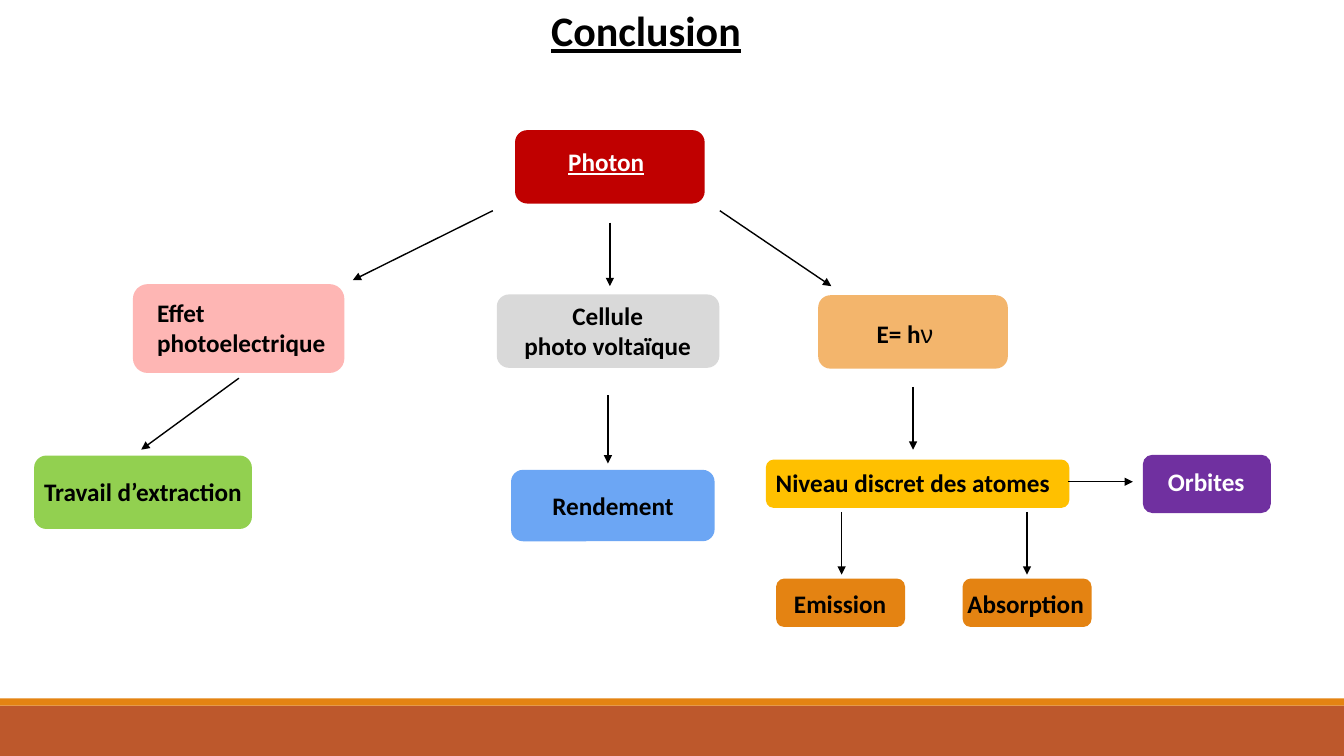
from dataclasses import dataclass

from lxml import etree
from pptx import Presentation
from pptx.dml.color import RGBColor
from pptx.enum.shapes import MSO_CONNECTOR, MSO_SHAPE
from pptx.enum.text import MSO_ANCHOR, PP_ALIGN
from pptx.oxml.ns import qn
from pptx.slide import Slide
from pptx.util import Cm, Pt

RECTANGLE = MSO_SHAPE.RECTANGLE
ROUNDED = MSO_SHAPE.ROUNDED_RECTANGLE
STRAIGHT = MSO_CONNECTOR.STRAIGHT
TOP = MSO_ANCHOR.TOP
LEFT, CENTER = PP_ALIGN.LEFT, PP_ALIGN.CENTER

SLIDE_WIDTH, SLIDE_HEIGHT = 33.87, 19.05
BLACK, WHITE, ORANGE, RUST = "000000", "FFFFFF", "E48312", "BD582C"
LINE_HEIGHT = 1.02
LEVEL_TOP, LEVEL_HEIGHT = 14.58, 1.22


@dataclass(frozen=True)
class Box:
    left: float
    top: float
    width: float
    height: float


@dataclass(frozen=True)
class Piece:
    text: str
    font: str = "Calibri"
    bold: bool = True


@dataclass(frozen=True)
class Label:
    box: Box
    lines: tuple[tuple[Piece, ...], ...]
    color: str = BLACK
    size: int = 18
    underline: bool = False
    align: PP_ALIGN = LEFT


@dataclass(frozen=True)
class Concept:
    box: Box
    fill: str
    label: Label


@dataclass(frozen=True)
class Arrow:
    start: tuple[float, float]
    end: tuple[float, float]


TITLE = Label(Box(13.64, 0, 10.46, 1.55), ((Piece("Conclusion"),),), size=30, underline=True)

CONCEPTS = (
    Concept(Box(12.98, 3.28, 4.78, 1.85), "C00000",
            Label(Box(14.07, 3.56, 4.06, LINE_HEIGHT), ((Piece("Photon"),),),
                  color=WHITE, underline=True)),
    Concept(Box(3.35, 7.16, 5.33, 2.24), "FEB6B4",
            Label(Box(3.71, 7.37, 5.33, 1.8), ((Piece("Effet photoelectrique"),),))),
    Concept(Box(12.52, 7.42, 5.61, 1.85), "D9D9D9",
            Label(Box(12.8, 7.44, 5.03, 1.8),
                  ((Piece("Cellule"),), (Piece("photo voltaïque"),)), align=CENTER)),
    Concept(Box(20.62, 7.44, 4.78, 1.85), "F3B56C",
            Label(Box(21.84, 7.9, 3.56, LINE_HEIGHT),
                  ((Piece("E= h"), Piece("ν", "Arial", False)),))),
    Concept(Box(0.86, 11.48, 5.49, 1.85), "92D050",
            Label(Box(0.86, 11.89, 5.61, LINE_HEIGHT), ((Piece("Travail d’extraction"),),))),
    Concept(Box(12.88, 11.84, 5.13, 1.8), "6CA6F4",
            Label(Box(13.67, 12.24, 5.61, LINE_HEIGHT), ((Piece("Rendement"),),))),
    Concept(Box(19.3, 11.58, 7.65, LEVEL_HEIGHT), "FFC000",
            Label(Box(19.3, 11.66, 10.67, LINE_HEIGHT),
                  ((Piece("Niveau discret des atomes"),),))),
    Concept(Box(28.8, 11.46, 3.23, 1.47), "7030A0",
            Label(Box(29.18, 11.63, 4.5, LINE_HEIGHT), ((Piece("Orbites"),),), color=WHITE)),
    Concept(Box(19.56, LEVEL_TOP, 3.25, LEVEL_HEIGHT), ORANGE,
            Label(Box(19.76, 14.71, 10.67, LINE_HEIGHT), ((Piece("Emission"),),))),
    Concept(Box(24.26, LEVEL_TOP, 3.25, LEVEL_HEIGHT), ORANGE,
            Label(Box(24.13, 14.71, 9.7, LINE_HEIGHT), ((Piece("Absorption"),),))),
)

ARROWS = (
    Arrow((12.42, 5.31), (8.89, 7.06)),
    Arrow((15.37, 5.61), (15.37, 7.21)),
    Arrow((18.14, 5.31), (20.95, 7.21)),
    Arrow((6.02, 9.53), (3.56, 11.33)),
    Arrow((15.32, 9.96), (15.32, 11.68)),
    Arrow((23.01, 9.75), (23.01, 11.33)),
    Arrow((26.92, 12.14), (28.55, 12.14)),
    Arrow((21.21, 12.9), (21.21, 14.48)),
    Arrow((25.88, 12.9), (25.88, 14.48)),
)


def rgb(color: str) -> RGBColor:
    return RGBColor.from_string(color)


def place(box: Box) -> tuple[Cm, Cm, Cm, Cm]:
    return Cm(box.left), Cm(box.top), Cm(box.width), Cm(box.height)


def draw_block(slide: Slide, kind: MSO_SHAPE, box: Box, fill: str) -> None:
    block = slide.shapes.add_shape(kind, *place(box))
    block.shadow.inherit = False
    block.fill.solid()
    block.fill.fore_color.rgb = rgb(fill)
    block.line.fill.background()


def draw_label(slide: Slide, label: Label) -> None:
    frame = slide.shapes.add_textbox(*place(label.box)).text_frame
    frame.word_wrap = True
    frame.vertical_anchor = TOP
    for index, pieces in enumerate(label.lines):
        paragraph = frame.add_paragraph() if index else frame.paragraphs[0]
        paragraph.alignment = label.align
        for piece in pieces:
            run = paragraph.add_run()
            run.text = piece.text
            run.font.name = piece.font
            run.font.size = Pt(label.size)
            run.font.bold = piece.bold
            run.font.underline = label.underline
            run.font.color.rgb = rgb(label.color)


def draw_concept(slide: Slide, concept: Concept) -> None:
    draw_block(slide, ROUNDED, concept.box, concept.fill)
    draw_label(slide, concept.label)


def draw_arrow(slide: Slide, arrow: Arrow) -> None:
    ends = [Cm(value) for value in arrow.start + arrow.end]
    connector = slide.shapes.add_connector(STRAIGHT, *ends)
    connector.line.color.rgb = rgb(BLACK)
    connector.line.width = Pt(1)
    etree.SubElement(connector.line._get_or_add_ln(), qn("a:tailEnd"), type="triangle")
    etree.SubElement(connector._element.spPr, qn("a:effectLst"))


def main() -> None:
    presentation = Presentation()
    presentation.slide_width = Cm(SLIDE_WIDTH)
    presentation.slide_height = Cm(SLIDE_HEIGHT)
    slide = presentation.slides.add_slide(presentation.slide_layouts[6])
    draw_block(slide, RECTANGLE, Box(0, 17.78, SLIDE_WIDTH, 1.27), RUST)
    draw_block(slide, RECTANGLE, Box(0, 17.6, SLIDE_WIDTH, 0.18), ORANGE)
    draw_label(slide, TITLE)
    for concept in CONCEPTS:
        draw_concept(slide, concept)
    for arrow in ARROWS:
        draw_arrow(slide, arrow)
    presentation.save("out.pptx")


if __name__ == "__main__":
    main()
